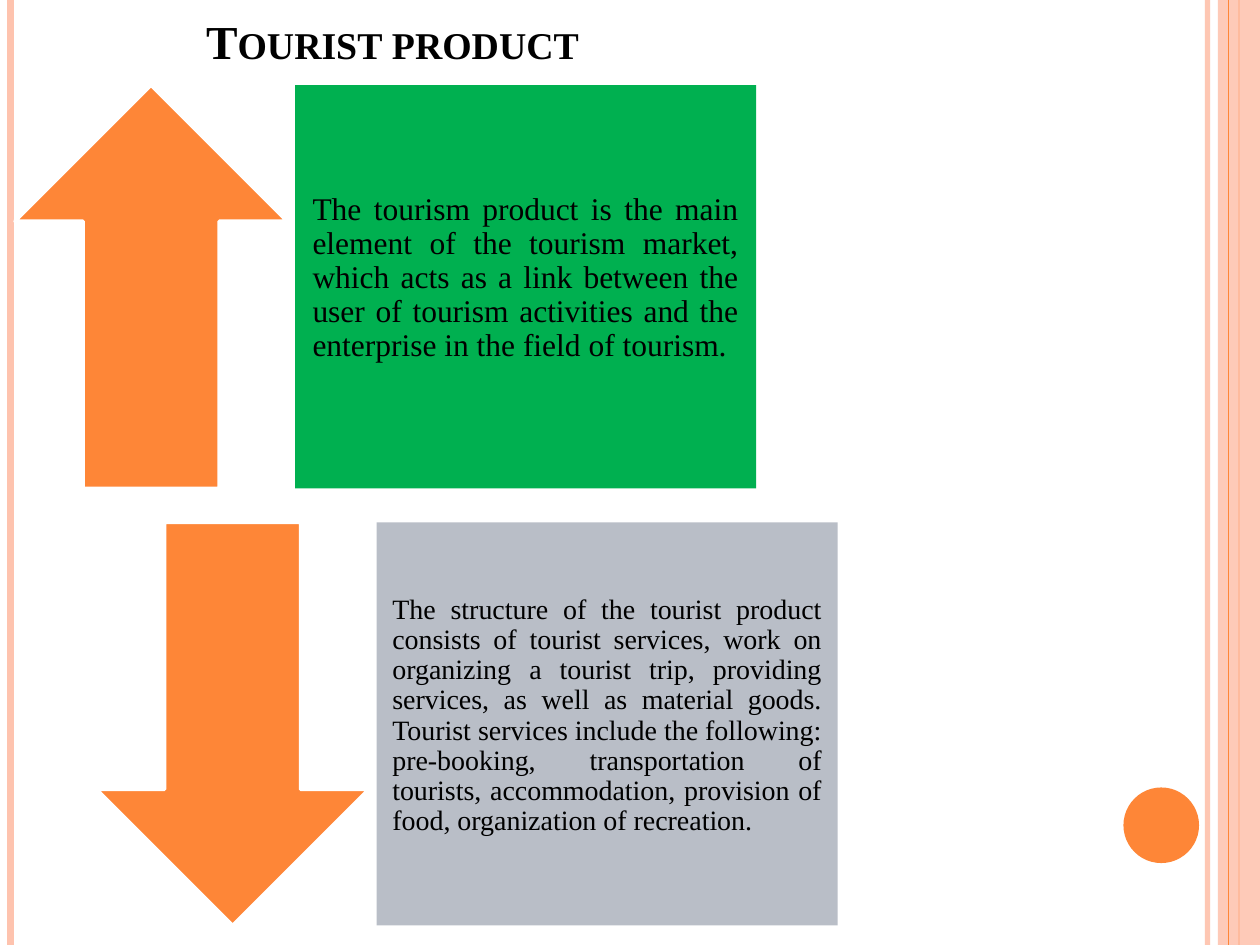
import pptx
import pptx.dml.color
import pptx.enum.shapes
import pptx.enum.text
import pptx.oxml
import pptx.oxml.ns
import pptx.util

Pt = pptx.util.Pt
SHAPES = pptx.enum.shapes.MSO_SHAPE
ALIGN = pptx.enum.text.PP_ALIGN
ANCHOR = pptx.enum.text.MSO_ANCHOR
FONT_NAME = "Times New Roman"
ORANGE, PEACH, GREEN, GREY = "FE8637", "FEC3AE", "00B050", "B9BEC7"
WHITE, BLACK = "FFFFFF", "000000"
SLIDE_WIDTH, SLIDE_HEIGHT = 720, 540

PRODUCT_TEXT = (
    "The tourism product is the main element of the tourism market, which acts as a link "
    "between the user of tourism activities and the enterprise in the field of tourism."
)
STRUCTURE_TEXT = (
    "The structure of the tourist product consists of tourist services, work on organizing "
    "a tourist trip, providing services, as well as material goods. Tourist services include "
    "the following: pre-booking, transportation of tourists, accommodation, provision of food, "
    "organization of recreation."
)


def color(hex_string):
    return pptx.dml.color.RGBColor.from_string(hex_string)


def set_opacity(element, percent):
    fill_color = element.find(".//" + pptx.oxml.ns.qn("a:srgbClr"))
    alpha = pptx.oxml.parse_xml(f'<a:alpha {pptx.oxml.ns.nsdecls("a")} val="{percent * 1000}"/>')
    fill_color.append(alpha)


def format_font(paragraph, size, bold=False):
    font = paragraph.font
    font.name = FONT_NAME
    font.size = Pt(size)
    font.bold = bold
    font.color.rgb = color(BLACK)


def add_filled_shape(slide, kind, box, fill):
    shape = slide.shapes.add_shape(kind, *map(Pt, box))
    shape.shadow.inherit = False
    shape.fill.solid()
    shape.fill.fore_color.rgb = color(fill)
    shape.line.fill.background()
    return shape


def add_rule(slide, x, width, hex_string, opacity=100):
    rule = slide.shapes.add_connector(
        pptx.enum.shapes.MSO_CONNECTOR.STRAIGHT, Pt(x), Pt(0), Pt(x), Pt(SLIDE_HEIGHT))
    rule.line.width = Pt(width)
    rule.line.color.rgb = color(hex_string)
    properties = rule._element.spPr
    if opacity < 100:
        set_opacity(properties, opacity)
    properties.append(pptx.oxml.parse_xml(f'<a:effectLst {pptx.oxml.ns.nsdecls("a")}/>'))


def add_side_decoration(slide):
    add_rule(slide, 690, 3, PEACH, 93)
    add_rule(slide, 6, 4.5, PEACH)
    add_rule(slide, 708, 1.5, ORANGE)
    band = add_filled_shape(slide, SHAPES.RECTANGLE, (696, 0, 24, SLIDE_HEIGHT), PEACH)
    set_opacity(band._element.spPr, 87)
    add_rule(slide, 702, 0.75, ORANGE)
    add_filled_shape(slide, SHAPES.OVAL, (642, 450, 43.2, 43.2), ORANGE)


def set_title(slide, box, text):
    title = slide.shapes.title
    title.left, title.top, title.width, title.height = map(Pt, box)
    frame = title.text_frame
    frame.text = text
    frame.word_wrap = True
    frame.auto_size = pptx.enum.text.MSO_AUTO_SIZE.NONE
    frame.vertical_anchor = ANCHOR.BOTTOM
    paragraph = frame.paragraphs[0]
    paragraph.alignment = ALIGN.CENTER
    format_font(paragraph, 27, bold=True)
    paragraph._p.find(".//" + pptx.oxml.ns.qn("a:defRPr")).set("cap", "small")


def add_arrow_row(slide, box, arrow_kind, fill, text, size, inset):
    left, top, width, height = box
    arrow_width, panel_width = 155.5, 263.5
    arrow = add_filled_shape(slide, arrow_kind, (left, top, arrow_width, height), ORANGE)
    arrow.line.color.rgb = color(WHITE)
    arrow.line.width = Pt(2)

    panel_left = left + width - panel_width
    panel = add_filled_shape(
        slide, SHAPES.RECTANGLE, (panel_left, top, panel_width, height), fill)
    frame = panel.text_frame
    frame.text = text
    frame.word_wrap = True
    frame.vertical_anchor = ANCHOR.MIDDLE
    frame.margin_top = 0
    frame.margin_left = frame.margin_right = frame.margin_bottom = Pt(inset)
    paragraph = frame.paragraphs[0]
    paragraph.alignment = ALIGN.JUSTIFY
    paragraph.line_spacing = 0.9
    format_font(paragraph, size)


def main():
    presentation = pptx.Presentation()
    presentation.slide_width = Pt(SLIDE_WIDTH)
    presentation.slide_height = Pt(SLIDE_HEIGHT)
    slide = presentation.slides.add_slide(presentation.slide_layouts[5])

    add_side_decoration(slide)
    set_title(slide, (31, 3.6, 386.6, 39.6), "Tourist product")
    rows = [
        (SHAPES.UP_ARROW, GREEN, PRODUCT_TEXT, 18, 10),
        (SHAPES.DOWN_ARROW, GREY, STRUCTURE_TEXT, 16, 9),
    ]
    for index, row in enumerate(rows):
        box = (8.6 + index * 46.6, 48.7 + index * 249.8, 423.5, 230.4)
        add_arrow_row(slide, box, *row)

    presentation.save("out.pptx")


if __name__ == "__main__":
    main()
